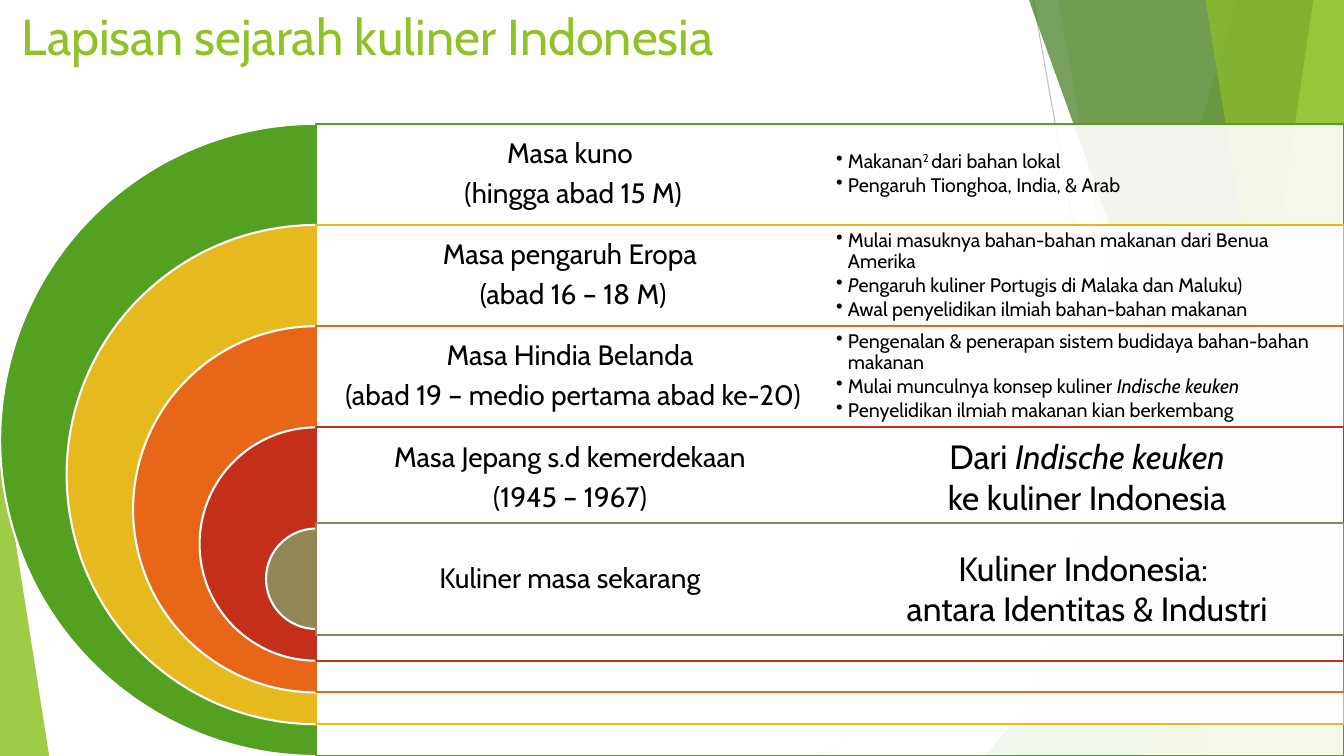
"""Build the slide on the layers of Indonesian culinary history."""
from dataclasses import dataclass
from typing import NamedTuple, Optional, Union

import pptx
import pptx.dml.color
import pptx.enum.shapes
import pptx.enum.text
import pptx.oxml.ns
import pptx.util
from lxml import etree

Cm = pptx.util.Cm
Pt = pptx.util.Pt
RGB = pptx.dml.color.RGBColor
SHAPE = pptx.enum.shapes.MSO_SHAPE
ALIGN = pptx.enum.text.PP_ALIGN
ANCHOR = pptx.enum.text.MSO_ANCHOR
qn = pptx.oxml.ns.qn

FONT = "Cabin"
BLACK = RGB(0x00, 0x00, 0x00)
WHITE = RGB(0xFF, 0xFF, 0xFF)
LIME = RGB(0x90, 0xC2, 0x26)
GREEN = RGB(0x54, 0xA0, 0x21)
DARK = RGB(0x3F, 0x78, 0x19)
PALE = RGB(0xC0, 0xE4, 0x74)
GOLD = RGB(0xE6, 0xB9, 0x1E)
ORANGE = RGB(0xE7, 0x66, 0x18)
RED = RGB(0xC4, 0x2F, 0x1A)
OLIVE = RGB(0x91, 0x86, 0x55)
GREY = RGB(0xBF, 0xBF, 0xBF)
SILVER = RGB(0xD9, 0xD9, 0xD9)

WIDTH, HEIGHT = 33.87, 19.05
AXIS, TOP, STEP = 7.97, 3.12, 2.55
OUTER, SHRINK = 15.93, 3.35
HALF = (WIDTH - AXIS) / 2


class Bit(NamedTuple):
    text: str
    italic: bool = False
    raised: bool = False


Line = list[Bit]


@dataclass
class Facet:
    top: float
    base: float
    color: RGB
    alpha: int


@dataclass
class Wedge:
    left: float
    top: float
    width: float
    apex: float
    color: RGB
    alpha: int


@dataclass
class Era:
    color: RGB
    label: list[Line]
    notes: list[Line]
    band: Optional[tuple[float, float]] = None


@dataclass
class Style:
    size: float
    color: RGB = BLACK
    align: ALIGN = ALIGN.LEFT
    anchor: ANCHOR = ANCHOR.TOP
    inset: Optional[float] = None
    lead: Optional[float] = None
    after: float = 0
    bullet: bool = False


TITLE = Style(36, LIME)
LABEL = Style(20, BLACK, ALIGN.CENTER, ANCHOR.MIDDLE, 0.2, 0.9, 7)
NOTE = Style(14, BLACK, ALIGN.LEFT, ANCHOR.MIDDLE, 0.15, 0.9, 2.1, True)
CLAIM = Style(24, BLACK, ALIGN.CENTER)

RAYS = [(26.04, 0, 29.41, HEIGHT, GREY), (WIDTH, 10.24, 20.62, HEIGHT, SILVER)]
DECOR: list[Union[Facet, Wedge]] = [
    Facet(31.19, 25.5, LIME, 30),
    Facet(26.67, 30.05, LIME, 20),
    Wedge(24.82, 8.46, 9.05, 1, GREEN, 72),
    Facet(25.93, 32.79, DARK, 70),
    Facet(33.1, 30.28, PALE, 70),
    Facet(30.38, 33.48, LIME, 65),
    Wedge(28.8, 9.98, 5.07, 1, LIME, 80),
    Wedge(0, 11.15, 1.24, 0, LIME, 85),
]
ERAS = [
    Era(GREEN, [[Bit("Masa kuno ")], [Bit("(hingga abad 15 M)")]],
        [[Bit("Makanan"), Bit("2 ", raised=True), Bit("dari bahan lokal")],
         [Bit("Pengaruh Tionghoa, India, & Arab")]]),
    Era(GOLD, [[Bit("Masa pengaruh Eropa ")], [Bit("(abad 16 – 18 M)")]],
        [[Bit("Mulai masuknya bahan-bahan makanan dari Benua Amerika")],
         [Bit("P", italic=True), Bit("engaruh kuliner Portugis di Malaka dan Maluku)")],
         [Bit("Awal penyelidikan ilmiah bahan-bahan makanan")]]),
    Era(ORANGE, [[Bit("Masa Hindia Belanda ")], [Bit("(abad 19 – medio pertama abad ke-20)")]],
        [[Bit("Pengenalan & penerapan sistem budidaya bahan-bahan makanan")],
         [Bit("Mulai munculnya konsep kuliner "), Bit("Indische keuken", italic=True)],
         [Bit("Penyelidikan ilmiah makanan kian berkembang")]]),
    Era(RED, [[Bit("Masa Jepang s.d kemerdekaan ")], [Bit("(1945 – 1967) ")]], []),
    Era(OLIVE, [[Bit("Kuliner masa sekarang ")]], [], (13.18, 2.82)),
]
CLAIMS = [
    (13.67, 2.31, [[Bit("Kuliner Indonesia: ")], [Bit("antara Identitas & Industri")]]),
    (10.87, 3.33, [[Bit("Dari "), Bit("Indische keuken", italic=True)],
                   [Bit("ke kuliner Indonesia")]]),
]


def paint(shape, color: RGB, alpha: int = 100, edge: Optional[RGB] = None) -> None:
    shape.shadow.inherit = False
    shape.fill.solid()
    shape.fill.fore_color.rgb = color
    if alpha < 100:
        tint = shape.element.spPr.find(f"{qn('a:solidFill')}/{qn('a:srgbClr')}")
        etree.SubElement(tint, qn("a:alpha")).set("val", str(alpha * 1000))
    if edge is None:
        shape.line.fill.background()
    else:
        shape.line.color.rgb = edge
        shape.line.width = Pt(1.5)


def add_form(shapes, kind: SHAPE, left: float, top: float, width: float, height: float):
    return shapes.add_shape(kind, Cm(left), Cm(top), Cm(width), Cm(height))


def add_ray(shapes, x1: float, y1: float, x2: float, y2: float, color: RGB) -> None:
    kind = pptx.enum.shapes.MSO_CONNECTOR.STRAIGHT
    ray = shapes.add_connector(kind, Cm(x1), Cm(y1), Cm(x2), Cm(y2))
    ray.line.color.rgb = color
    ray.line.width = Pt(0.75)
    etree.SubElement(ray.element.spPr, qn("a:effectLst"))


def add_decor(shapes, item: Union[Facet, Wedge]) -> None:
    if isinstance(item, Facet):
        pen = shapes.build_freeform(Cm(item.top), 0)
        pen.add_line_segments([(Cm(WIDTH), 0), (Cm(WIDTH), Cm(HEIGHT)),
                               (Cm(item.base), Cm(HEIGHT))])
        form = pen.convert_to_shape()
    else:
        form = add_form(shapes, SHAPE.ISOSCELES_TRIANGLE, item.left, item.top,
                        item.width, HEIGHT - item.top)
        form.adjustments[0] = item.apex
    paint(form, item.color, item.alpha)


def add_text(shapes, left: float, top: float, width: float, height: float,
             lines: list[Line], style: Style) -> None:
    frame = shapes.add_textbox(Cm(left), Cm(top), Cm(width), Cm(height)).text_frame
    frame.word_wrap = True
    frame.vertical_anchor = style.anchor
    if style.inset is not None:
        frame.margin_left = frame.margin_right = Cm(style.inset)
        frame.margin_top = frame.margin_bottom = Cm(style.inset)
    for rank, line in enumerate(lines):
        para = frame.add_paragraph() if rank else frame.paragraphs[0]
        para.alignment = style.align
        para.line_spacing = style.lead
        para.space_after = Pt(style.after)
        if style.bullet:
            props = para._p.get_or_add_pPr()
            props.set("marL", str(Cm(0.3)))
            props.set("indent", str(-Cm(0.3)))
            etree.SubElement(props, qn("a:buChar")).set("char", "•")
        para.font.name = FONT
        para.font.size = Pt(style.size)
        para.font.color.rgb = style.color
        for bit in line:
            run = para.add_run()
            run.text = bit.text
            if bit.italic:
                run.font.italic = True
            if bit.raised:
                run._r.get_or_add_rPr().set("baseline", "30000")


def add_era(shapes, rank: int, era: Era) -> None:
    top, size = TOP + STEP * rank, OUTER - SHRINK * rank
    pie = add_form(shapes, SHAPE.PIE, AXIS - size / 2, top, size, size)
    pie.adjustments[0], pie.adjustments[1] = 54, 162
    paint(pie, era.color, edge=WHITE)
    start, tall = era.band or (top, size)
    band = add_form(shapes, SHAPE.RECTANGLE, AXIS, start, WIDTH - AXIS, tall)
    paint(band, WHITE, 90, era.color)
    add_text(shapes, AXIS, start, HALF, min(tall, STEP) if not era.band else tall,
             era.label, LABEL)
    if era.notes:
        add_text(shapes, AXIS + HALF, top, HALF, STEP, era.notes, NOTE)


def main() -> None:
    deck = pptx.Presentation()
    deck.slide_width, deck.slide_height = Cm(WIDTH), Cm(HEIGHT)
    shapes = deck.slides.add_slide(deck.slide_layouts[6]).shapes
    for ray in RAYS:
        add_ray(shapes, *ray)
    for item in DECOR:
        add_decor(shapes, item)
    add_text(shapes, 0.3, 0, 25.63, 3.18, [[Bit("Lapisan sejarah kuliner Indonesia")]], TITLE)
    for rank, era in enumerate(ERAS):
        add_era(shapes, rank, era)
    for top, tall, lines in CLAIMS:
        add_text(shapes, AXIS + HALF, top, HALF, tall, lines, CLAIM)
    deck.save("out.pptx")


if __name__ == "__main__":
    main()
